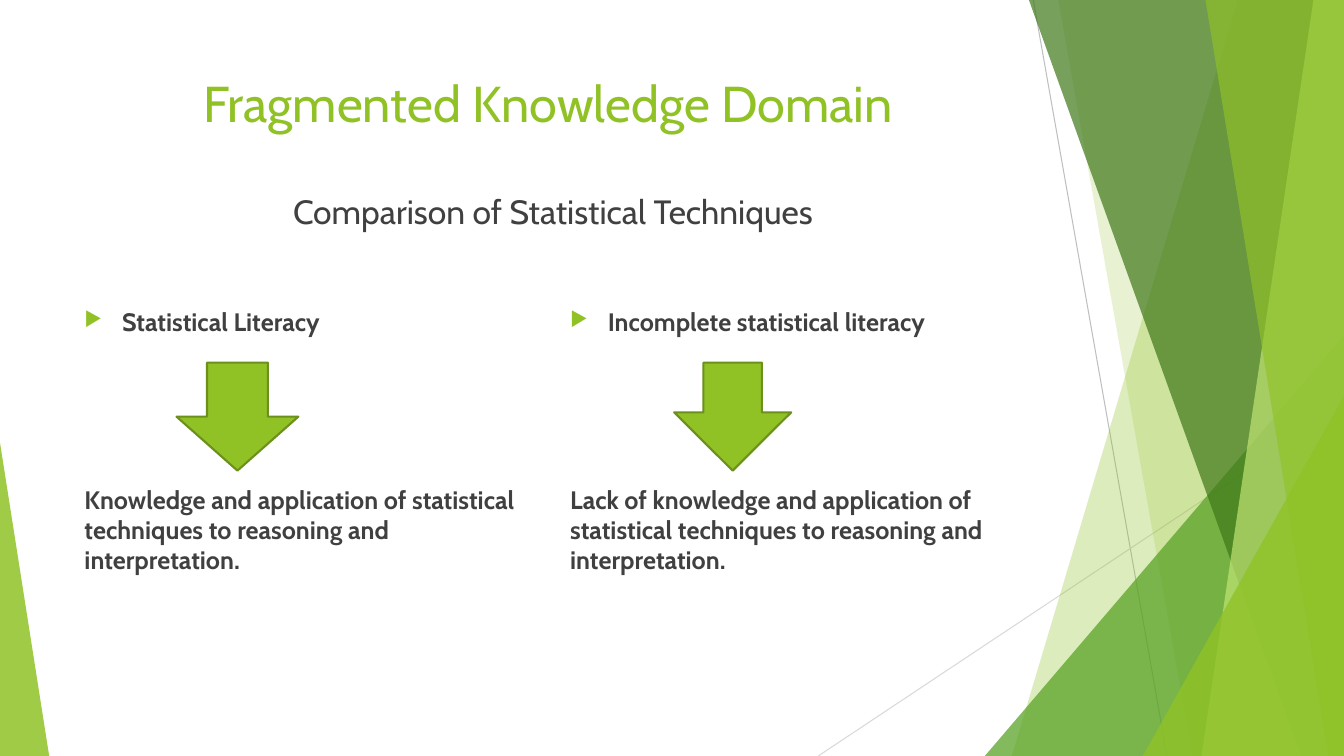
from lxml.etree import SubElement
from pptx import Presentation
from pptx.dml.color import RGBColor
from pptx.enum.shapes import MSO_CONNECTOR, MSO_SHAPE
from pptx.enum.text import MSO_ANCHOR, PP_ALIGN
from pptx.oxml.ns import qn
from pptx.util import Cm, Pt

WIDTH, HEIGHT = 33.87, 19.05
GREEN, DARK_GREEN, TEXT = "90C226", "6B901C", "404040"


def color(value):
    return RGBColor.from_string(value)


class SlideBuilder:
    font = "Cabin"

    def __init__(self, slide):
        self.slide = slide
        self.shapes = slide.shapes

    def line(self, start, end, stroke):
        connector = self.shapes.add_connector(
            MSO_CONNECTOR.STRAIGHT, *map(Cm, start + end))
        connector.line.color.rgb = color(stroke)
        connector.line.width = Pt(0.75)
        SubElement(connector._element.spPr, qn("a:effectLst"))

    def paint(self, shape, fill, opacity=100, stroke=None):
        shape.shadow.inherit = False
        shape.fill.solid()
        shape.fill.fore_color.rgb = color(fill)
        if opacity < 100:
            solid = shape._element.spPr.find(qn("a:solidFill"))
            SubElement(solid[0], qn("a:alpha"), val=str(opacity * 1000))
        if stroke:
            shape.line.color.rgb = color(stroke)
            shape.line.width = Pt(1.5)
        else:
            shape.line.fill.background()

    def ribbon(self, top_x, bottom_x, fill, opacity):
        """Band from a slanted left edge to the right edge of the slide."""
        outline = self.shapes.build_freeform(Cm(top_x), 0)
        corners = [(WIDTH, 0), (WIDTH, HEIGHT), (bottom_x, HEIGHT)]
        outline.add_line_segments([(Cm(x), Cm(y)) for x, y in corners])
        self.paint(outline.convert_to_shape(), fill, opacity)

    def corner(self, left, top, width, apex, fill, opacity):
        """Right triangle standing on the bottom edge of the slide."""
        shape = self.shapes.add_shape(
            MSO_SHAPE.ISOSCELES_TRIANGLE,
            *map(Cm, (left, top, width, HEIGHT - top)))
        shape.adjustments[0] = apex
        self.paint(shape, fill, opacity)

    def down_arrow(self, left, top, width, height, head):
        shape = self.shapes.add_shape(
            MSO_SHAPE.DOWN_ARROW, *map(Cm, (left, top, width, height)))
        shape.adjustments[1] = head
        self.paint(shape, GREEN, stroke=DARK_GREEN)

    def text(self, box, lines, size, fill=TEXT, bold=False,
             align=PP_ALIGN.LEFT, anchor=MSO_ANCHOR.TOP):
        frame = self.shapes.add_textbox(*map(Cm, box)).text_frame
        frame.word_wrap = True
        frame.vertical_anchor = anchor
        frame.text = "\n".join(lines)
        for paragraph in frame.paragraphs:
            paragraph.alignment = align
            font = paragraph.runs[0].font
            font.name, font.size, font.bold = self.font, Pt(size), bold
            font.color.rgb = color(fill)
        return frame

    def bullet(self, paragraph):
        properties = paragraph._p.get_or_add_pPr()
        indent = Cm(0.95)
        properties.set("marL", str(indent))
        properties.set("indent", str(-indent))
        bullet_color = SubElement(properties, qn("a:buClr"))
        SubElement(bullet_color, qn("a:srgbClr"), val=GREEN)
        SubElement(properties, qn("a:buSzPct"), val="80000")
        SubElement(properties, qn("a:buChar"), char="▶")

    def column(self, left, heading, explanation):
        """Bulleted heading, room for an arrow, then the explanation."""
        frame = self.text((left, 7.59, 11.63, 9.17),
                          [heading, explanation], 18, bold=True)
        first, second = frame.paragraphs
        self.bullet(first)
        second.space_before = Pt(105.5)


def draw_background(builder):
    builder.line((26.04, 0), (29.41, HEIGHT), "BFBFBF")
    builder.line((WIDTH, 10.24), (20.62, HEIGHT), "D9D9D9")
    builder.ribbon(31.19, 25.5, GREEN, 30)
    builder.ribbon(26.67, 30.05, GREEN, 20)
    builder.corner(24.82, 8.46, 9.05, 1, "54A021", 72)
    builder.ribbon(25.93, 32.79, "3F7819", 70)
    builder.ribbon(33.1, 30.28, "C0E474", 70)
    builder.ribbon(30.38, 33.48, GREEN, 65)
    builder.corner(28.8, 9.98, 5.07, 1, GREEN, 80)
    builder.corner(0, 11.15, 1.24, 0, GREEN, 85)


def main():
    presentation = Presentation()
    presentation.slide_width = Cm(WIDTH)
    presentation.slide_height = Cm(HEIGHT)
    blank = presentation.slide_layouts[6]
    builder = SlideBuilder(presentation.slides.add_slide(blank))

    draw_background(builder)
    builder.text((1.88, 1.7, 23.88, 3.66), ["Fragmented Knowledge Domain"],
                 36, GREEN, align=PP_ALIGN.CENTER)
    builder.text((5.26, 4.67, 17.35, 1.27),
                 ["Comparison of Statistical Techniques"], 24,
                 align=PP_ALIGN.CENTER, anchor=MSO_ANCHOR.BOTTOM)
    builder.column(1.88, "Statistical Literacy",
                   "Knowledge and application of statistical techniques "
                   "to reasoning and interpretation.")
    builder.column(14.12, "Incomplete statistical literacy",
                   "Lack of knowledge and application of statistical "
                   "techniques to reasoning and interpretation.")
    builder.down_arrow(4.45, 9.14, 3.07, 2.72, head=0.5)
    builder.down_arrow(16.99, 9.14, 2.95, 2.72, head=0.54)
    presentation.save("out.pptx")


if __name__ == "__main__":
    main()
